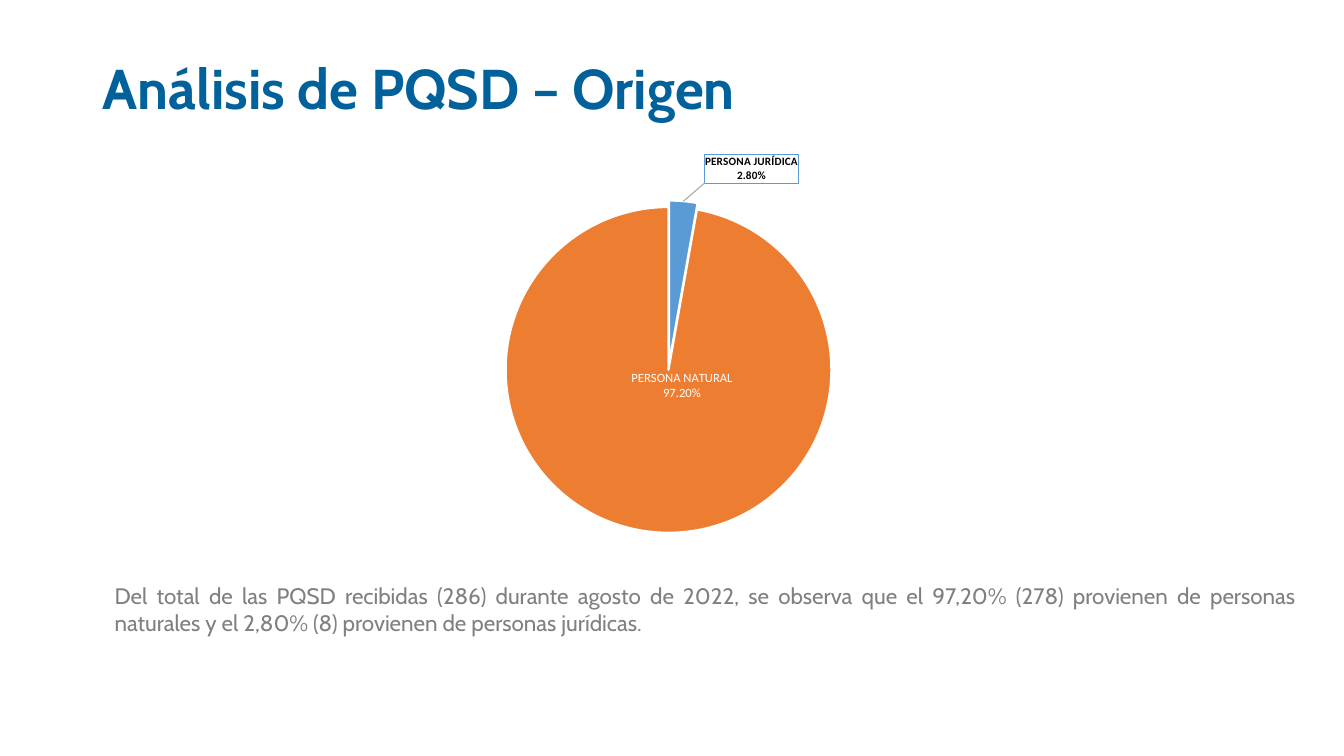
"""Builds the slide on the origin of PQSD requests, with a pie chart."""
from pptx import Presentation
from pptx.chart.data import CategoryChartData
from pptx.dml.color import RGBColor
from pptx.enum.chart import XL_CHART_TYPE
from pptx.enum.text import MSO_ANCHOR, PP_ALIGN
from pptx.oxml import parse_xml
from pptx.oxml.ns import nsdecls, qn
from pptx.util import Cm, Pt

PIE = XL_CHART_TYPE.PIE
MIDDLE, TOP = MSO_ANCHOR.MIDDLE, MSO_ANCHOR.TOP
LEFT, JUSTIFY = PP_ALIGN.LEFT, PP_ALIGN.JUSTIFY

THEME = {
    "title": {"name": "Cabin", "size": Pt(40), "bold": True, "color": "01619B"},
    "body": {"name": "Cabin", "size": Pt(16), "bold": False, "color": "808080"},
    "chart": {"name": "Calibri", "size": Pt(10), "bold": False, "color": "000000"},
    "white": "FFFFFF",
    "callout": "5B9BD5",
    "leader": "A6A6A6",
}

TEXTS = [
    {"text": "Análisis de PQSD – Origen", "style": "title",
     "box": (2.34, 0.91, 26.9, 2.77), "anchor": MIDDLE, "align": LEFT, "spacing": 0.9},
    {"text": "Del total de las PQSD recibidas (286) durante agosto de 2022, se observa "
             "que el 97,20% (278) provienen de personas naturales y el 2,80% (8) "
             "provienen de personas jurídicas.", "style": "body",
     "box": (2.64, 14.55, 30.28, 1.63), "anchor": TOP, "align": JUSTIFY, "spacing": 1.0},
]

CHART_BOX = (8.26, 3.68, 17.35, 10.26)
PLOT = {"x": 0.08, "y": 0.15, "w": 0.83, "h": 0.8}
SLICES = [
    {"name": "PERSONA JURÍDICA", "value": 2.8, "fill": "5B9BD5", "explosion": 4,
     "pos": "outEnd", "shift": (0.03, -0.03), "size": 8, "bold": 1,
     "color": "000000", "callout": True},
    {"name": "PERSONA NATURAL", "value": 97.2, "fill": "ED7D31", "explosion": 0,
     "pos": "ctr", "shift": (0.03, -0.16), "size": 9, "bold": 0,
     "color": "FFFFFF", "callout": False},
]

SHOW = """<c:showLegendKey val="0"/><c:showVal val="0"/><c:showCatName val="1"/>
<c:showSerName val="0"/><c:showPercent val="1"/><c:showBubbleSize val="0"/>
<c:separator>\n</c:separator>"""
NUMBER = '<c:numFmt formatCode="0.00%" sourceLinked="0"/>'


def solid(color):
    return f'<a:solidFill><a:srgbClr val="{color}"/></a:solidFill>'


def set_font(font, style):
    for key, value in style.items():
        if key == "color":
            font.color.rgb = RGBColor.from_string(value)
        else:
            setattr(font, key, value)


def add_text(s, item):
    tf = s.shapes.add_textbox(*map(Cm, item["box"])).text_frame
    tf.word_wrap = True
    tf.vertical_anchor = item["anchor"]
    p = tf.paragraphs[0]
    p.alignment, p.line_spacing = item["align"], item["spacing"]
    r = p.add_run()
    r.text = item["text"]
    set_font(r.font, THEME[item["style"]])


def label_xml(index, part):
    x, y = part["shift"]
    box = "<a:noFill/><a:ln><a:noFill/></a:ln>"
    if part["callout"]:
        box = f'{solid(THEME["white"])}<a:ln w="9525">{solid(THEME["callout"])}</a:ln>'
    return f"""<c:dLbl><c:idx val="{index}"/>
<c:layout><c:manualLayout><c:x val="{x}"/><c:y val="{y}"/></c:manualLayout></c:layout>
{NUMBER}<c:spPr>{box}</c:spPr>
<c:txPr><a:bodyPr/><a:p><a:pPr><a:defRPr sz="{part["size"] * 100}" b="{part["bold"]}">
{solid(part["color"])}<a:latin typeface="{THEME["chart"]["name"]}"/></a:defRPr></a:pPr></a:p></c:txPr>
<c:dLblPos val="{part["pos"]}"/>{SHOW}</c:dLbl>"""


def add_labels(ser):
    labels = "".join(label_xml(i, part) for i, part in enumerate(SLICES))
    leader = f'<c:spPr><a:ln w="9525">{solid(THEME["leader"])}</a:ln></c:spPr>'
    ser.find(qn("c:cat")).addprevious(parse_xml(
        f'<c:dLbls {nsdecls("c", "a")}>{labels}{NUMBER}<c:dLblPos val="inEnd"/>{SHOW}'
        f'<c:showLeaderLines val="1"/><c:leaderLines>{leader}</c:leaderLines></c:dLbls>'))


def set_plot_layout(chart):
    area = chart._chartSpace.chart.plotArea
    for layout in area.findall(qn("c:layout")):
        area.remove(layout)
    sides = "".join(f'<c:{key} val="{value}"/>' for key, value in PLOT.items())
    area.insert(0, parse_xml(
        f'<c:layout {nsdecls("c")}><c:manualLayout><c:layoutTarget val="inner"/>'
        f'<c:xMode val="edge"/><c:yMode val="edge"/>{sides}</c:manualLayout></c:layout>'))


def add_pie(s):
    data = CategoryChartData()
    data.categories = [part["name"] for part in SLICES]
    data.add_series("Series 1", [part["value"] for part in SLICES])
    chart = s.shapes.add_chart(PIE, *map(Cm, CHART_BOX), data).chart
    chart.has_legend = chart.has_title = False
    set_font(chart.font, THEME["chart"])
    plot = chart.plots[0]
    plot.vary_by_categories = True
    series = plot.series[0]
    for i, part in enumerate(SLICES):
        fmt = series.points[i].format
        fmt.fill.solid()
        fmt.fill.fore_color.rgb = RGBColor.from_string(part["fill"])
        fmt.line.color.rgb = RGBColor.from_string(THEME["white"])
        fmt.line.width = Pt(1.5)
    ser = series._element
    for point, part in zip(ser.findall(qn("c:dPt")), SLICES):
        point.find(qn("c:spPr")).addprevious(parse_xml(
            f'<c:explosion {nsdecls("c")} val="{part["explosion"]}"/>'))
    add_labels(ser)
    set_plot_layout(chart)


def main():
    prs = Presentation()
    prs.slide_width, prs.slide_height = Cm(33.87), Cm(19.05)
    s = prs.slides.add_slide(prs.slide_layouts[6])
    for item in TEXTS:
        add_text(s, item)
    add_pie(s)
    prs.save("out.pptx")


if __name__ == "__main__":
    main()
